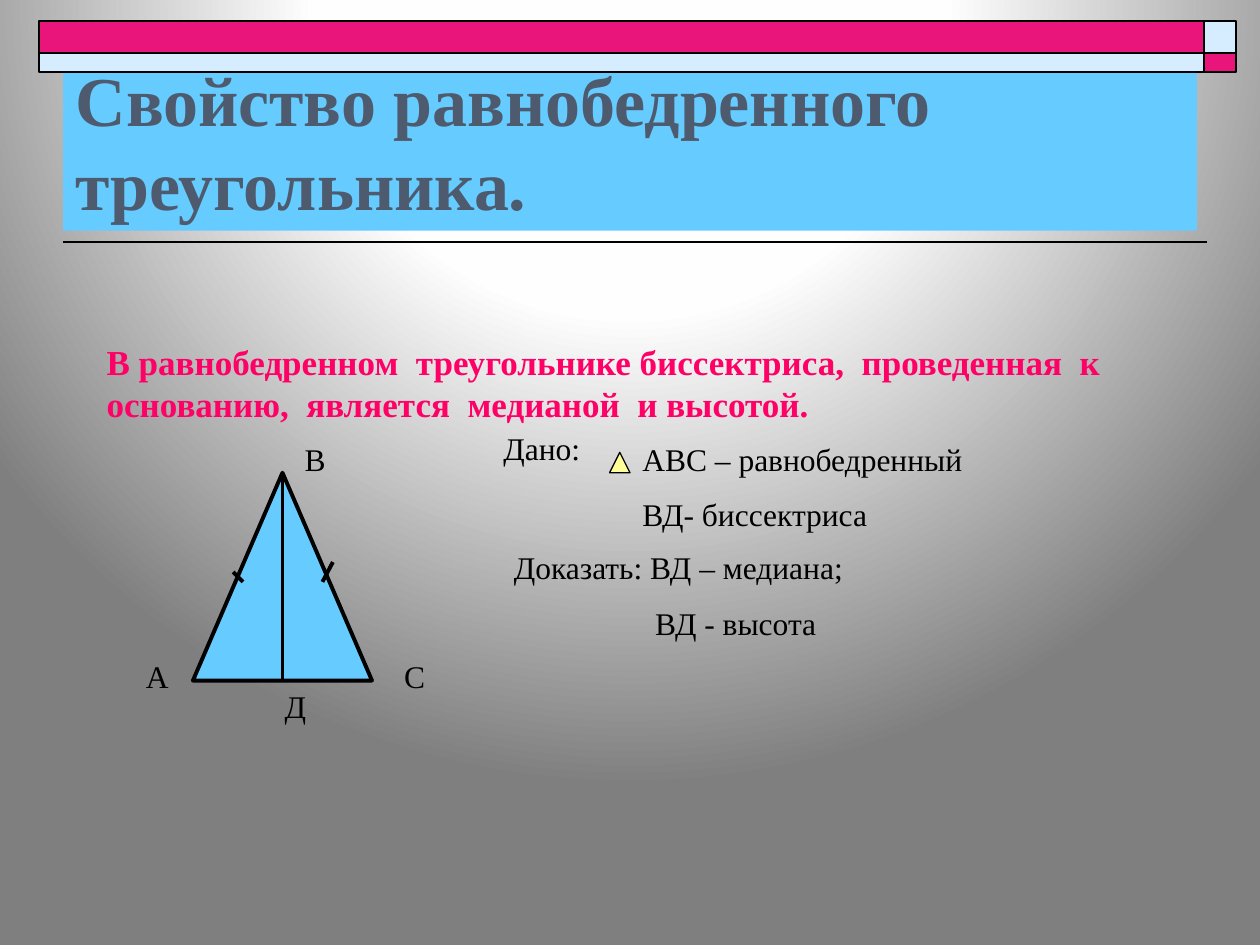
"""Build a geometry slide on the bisector of an isosceles triangle."""
from dataclasses import dataclass

from lxml import etree
from pptx import Presentation
from pptx.dml.color import RGBColor
from pptx.enum.shapes import MSO_CONNECTOR, MSO_SHAPE
from pptx.enum.text import MSO_ANCHOR, MSO_AUTO_SIZE, PP_ALIGN
from pptx.oxml import parse_xml
from pptx.oxml.ns import nsdecls, qn
from pptx.util import Cm, Pt

RECTANGLE = MSO_SHAPE.RECTANGLE
TRIANGLE = MSO_SHAPE.ISOSCELES_TRIANGLE
STRAIGHT = MSO_CONNECTOR.STRAIGHT
BOTTOM = MSO_ANCHOR.BOTTOM
TOP = MSO_ANCHOR.TOP
LEFT = PP_ALIGN.LEFT
NO_AUTOFIT = MSO_AUTO_SIZE.NONE

BLACK = RGBColor(0x00, 0x00, 0x00)
SLATE = RGBColor(0x4E, 0x5B, 0x6F)
SKY = RGBColor(0x66, 0xCC, 0xFF)
PALE_BLUE = RGBColor(0xD6, 0xEC, 0xFF)
MAGENTA = RGBColor(0xEA, 0x15, 0x7A)
PINK = RGBColor(0xFF, 0x00, 0x66)
YELLOW = RGBColor(0xFF, 0xFF, 0x99)
BACKGROUND_STOPS = ((0, "FFFFFF"), (40, "FEFEFE"), (100, "7F7F7F"))
FONT = "Times New Roman"


@dataclass(frozen=True)
class Area:
    left: float
    top: float
    width: float
    height: float

    def lengths(self):
        return Cm(self.left), Cm(self.top), Cm(self.width), Cm(self.height)


@dataclass(frozen=True)
class Note:
    area: Area
    lines: tuple[str, ...]
    last_indent: float = 0


@dataclass(frozen=True)
class Segment:
    start: tuple[float, float]
    end: tuple[float, float]
    width: float = 2.25


FIGURE = Area(3.89, 9.53, 3.61, 4.19)
APEX_X = FIGURE.left + FIGURE.width / 2
BASE_Y = FIGURE.top + FIGURE.height

BAND_COLUMNS = ((0.79, 23.49), (24.28, 0.64))
BAND_ROWS = ((0.43, 0.64), (1.07, 0.38))
BAND_COLORS = ((MAGENTA, PALE_BLUE), (PALE_BLUE, MAGENTA))

SEGMENTS = (
    Segment((24.33, 4.88), (1.27, 4.88), 1),
    Segment((APEX_X, FIGURE.top), (APEX_X, BASE_Y)),
    Segment((4.7, 11.53), (4.9, 11.73)),
    Segment((6.5, 11.73), (6.71, 11.33)),
)

NOTES = (
    Note(Area(2.69, 13.13, 1.19, 1.02), ("А",)),
    Note(Area(5.89, 8.74, 0.99, 1.02), ("В",)),
    Note(Area(7.9, 13.13, 1.4, 1.02), ("С",)),
    Note(Area(5.49, 13.72, 0.99, 1.02), ("Д",)),
    Note(Area(9.9, 8.53, 13.21, 2.16), ("Дано:",)),
    Note(Area(12.7, 8.74, 9.8, 4.47), ("АВС – равнобедренный", "ВД- биссектриса")),
    Note(Area(10.11, 10.92, 10.21, 2.16),
         ("Доказать: ВД – медиана;", "ВД - высота"), 2.85),
)


def paint_background(page) -> None:
    """Give the slide a circular gradient centred above its top edge."""
    stops = "".join(
        f'<a:gs pos="{position * 1000}"><a:srgbClr val="{color}"/></a:gs>'
        for position, color in BACKGROUND_STOPS
    )
    background = parse_xml(
        f'<p:bg {nsdecls("p", "a")}><p:bgPr><a:gradFill rotWithShape="1">'
        f'<a:gsLst>{stops}</a:gsLst><a:path path="circle">'
        '<a:fillToRect l="50000" t="-80000" r="50000" b="180000"/></a:path>'
        '</a:gradFill><a:effectLst/></p:bgPr></p:bg>'
    )
    page.element.cSld.insert(0, background)


def add_figure(page, kind, area: Area, color: RGBColor, width: float):
    """Draw a filled preset shape with a black outline."""
    shape = page.shapes.add_shape(kind, *area.lengths())
    shape.shadow.inherit = False
    shape.fill.solid()
    shape.fill.fore_color.rgb = color
    shape.line.color.rgb = BLACK
    shape.line.width = Pt(width)
    return shape


def add_segment(page, segment: Segment) -> None:
    """Draw a straight black line."""
    line = page.shapes.add_connector(
        STRAIGHT, *(Cm(value) for value in segment.start + segment.end)
    )
    line.line.color.rgb = BLACK
    line.line.width = Pt(segment.width)
    etree.SubElement(line.element.spPr, qn("a:effectLst"))


def write_text(box, *lines: str, size: float = 18, color: RGBColor = BLACK,
               bold: bool = False, anchor=TOP, last_indent: float = 0) -> None:
    """Fill a box with formatted paragraphs."""
    frame = box.text_frame
    frame.word_wrap = True
    frame.auto_size = NO_AUTOFIT
    frame.vertical_anchor = anchor
    for index, text in enumerate(lines):
        para = frame.add_paragraph() if index else frame.paragraphs[0]
        para.alignment = LEFT
        para.space_before = Pt(size * 0.57 if index else 0)
        span = para.add_run()
        span.text = text
        span.font.name = FONT
        span.font.size = Pt(size)
        span.font.bold = bold
        span.font.color.rgb = color
    if last_indent:
        para._p.get_or_add_pPr().set("marL", str(Cm(last_indent)))


def add_text(page, area: Area, *lines: str, **text_format) -> None:
    """Add a text box with formatted paragraphs."""
    write_text(page.shapes.add_textbox(*area.lengths()), *lines, **text_format)


def main() -> None:
    """Compose the slide and save the deck."""
    deck = Presentation()
    deck.slide_width, deck.slide_height = Cm(25.4), Cm(19.05)
    page = deck.slides.add_slide(deck.slide_layouts[5])
    paint_background(page)

    for (top, height), colors in zip(BAND_ROWS, BAND_COLORS):
        for (left, width), color in zip(BAND_COLUMNS, colors):
            add_figure(page, RECTANGLE, Area(left, top, width, height), color, 1)

    title = page.shapes.title
    title.left, title.top, title.width, title.height = Area(1.27, 1.47, 22.86, 3.18).lengths()
    title.fill.solid()
    title.fill.fore_color.rgb = SKY
    write_text(title, "Свойство равнобедренного  треугольника.",
               size=40, color=SLATE, bold=True, anchor=BOTTOM)

    add_text(page, Area(1.9, 6.73, 21.79, 1.96),
             "В равнобедренном  треугольнике биссектриса,  проведенная  к "
             "основанию,  является  медианой  и высотой.",
             size=20, color=PINK, bold=True)

    add_figure(page, TRIANGLE, FIGURE, SKY, 2.25)
    add_figure(page, TRIANGLE, Area(12.29, 9.12, 0.41, 0.41), YELLOW, 0.75)
    for segment in SEGMENTS:
        add_segment(page, segment)
    for note in NOTES:
        add_text(page, note.area, *note.lines, last_indent=note.last_indent)

    deck.save("out.pptx")


if __name__ == "__main__":
    main()
